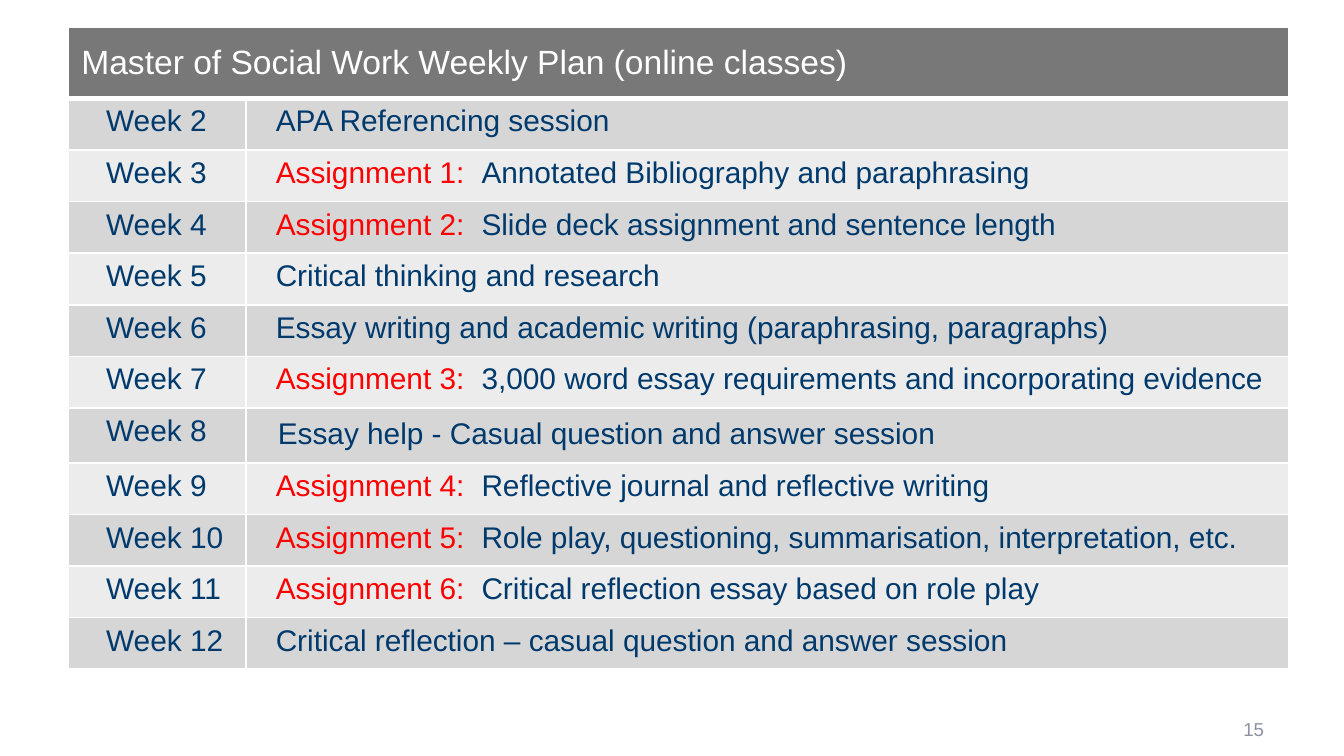
"""Build the weekly plan slide with its table of online classes."""
from typing import NamedTuple

from lxml import etree
from pptx import Presentation
from pptx.dml.color import RGBColor
from pptx.enum import text as t
from pptx.oxml import ns
from pptx.util import Pt

NAVY, RED, WHITE = "003A6D", "FF0000", "FFFFFF"
HEADER_GREY, PAGE_GREY = "777877", "8C91A3"
BANDS = ("D6D6D6", "ECECEC")
HEADER_HEIGHT, WEEK_HEIGHT = 38.2, 27.65
WEEK_INDENT, TOPIC_INDENT = 20.5, 16.1
TOPIC_TAB = 110.2
THIN, THICK = 1, 3


class Week(NamedTuple):
    number: int
    topic: str
    assignment: int = 0
    height: float = WEEK_HEIGHT
    indent: float = TOPIC_INDENT
    topic_top: float = 3.6


WEEKS = [
    Week(2, "APA Referencing session"),
    Week(3, "Annotated Bibliography and paraphrasing", 1),
    Week(4, "Slide deck assignment and sentence length", 2),
    Week(5, "Critical thinking and research"),
    Week(6, "Essay writing and academic writing (paraphrasing, paragraphs)"),
    Week(7, "3,000 word essay requirements and incorporating evidence", 3),
    Week(8, "Essay help - Casual question and answer session",
         height=29.5, indent=17.2, topic_top=5.4),
    Week(9, "Reflective journal and reflective writing", 4),
    Week(10, "Role play, questioning, summarisation, interpretation, etc.", 5),
    Week(11, "Critical reflection essay based on role play", 6),
    Week(12, "Critical reflection – casual question and answer session"),
]


def rgb(color: str) -> RGBColor:
    return RGBColor.from_string(color)


def add_run(paragraph, words: str, color: str, size: float) -> None:
    run = paragraph.add_run()
    run.text = words
    run.font.name = "Arial"
    run.font.size = Pt(size)
    run.font.bold = False
    run.font.color.rgb = rgb(color)


def add_tab(paragraph, position: float) -> None:
    properties = paragraph._p.get_or_add_pPr()
    stops = etree.SubElement(properties, ns.qn("a:tabLst"))
    etree.SubElement(stops, ns.qn("a:tab"), pos=str(Pt(position)), algn="l")


def style_cell(cell, fill: str, top: float = THIN, bottom: float = THIN) -> None:
    cell.fill.solid()
    cell.fill.fore_color.rgb = rgb(fill)
    properties = cell._tc.get_or_add_tcPr()
    widths = {"lnL": THIN, "lnR": THIN, "lnT": top, "lnB": bottom}
    for place, (side, width) in enumerate(widths.items()):
        line = etree.Element(ns.qn(f"a:{side}"), w=str(Pt(width)))
        solid = etree.SubElement(line, ns.qn("a:solidFill"))
        etree.SubElement(solid, ns.qn("a:srgbClr"), val=WHITE)
        properties.insert(place, line)


def fill_week(table, row: int, week: Week) -> None:
    table.rows[row].height = Pt(week.height)
    week_cell, topic_cell = table.cell(row, 0), table.cell(row, 1)
    for cell in (week_cell, topic_cell):
        style_cell(cell, BANDS[(row - 1) % 2], top=THICK if row == 1 else THIN)
    week_cell.margin_left = Pt(WEEK_INDENT)
    topic_cell.margin_left = Pt(week.indent)
    topic_cell.margin_top = Pt(week.topic_top)
    add_run(week_cell.text_frame.paragraphs[0], f"Week {week.number}", NAVY, 16)
    topic = topic_cell.text_frame.paragraphs[0]
    if week.assignment:
        add_tab(topic, TOPIC_TAB)
        add_run(topic, f"Assignment {week.assignment}:\t", RED, 16)
    add_run(topic, week.topic, NAVY, 16)


def add_plan(slide) -> None:
    height = HEADER_HEIGHT + sum(week.height for week in WEEKS)
    plan = slide.shapes.add_table(len(WEEKS) + 1, 2, Pt(36.4), Pt(14.5),
                                  Pt(654), Pt(height)).table
    plan.first_row = plan.horz_banding = False
    plan.columns[0].width, plan.columns[1].width = Pt(95.3), Pt(558.7)
    plan.rows[0].height = Pt(HEADER_HEIGHT)
    for column in range(2):
        style_cell(plan.cell(0, column), HEADER_GREY, bottom=THICK)
    header = plan.cell(0, 0)
    header.merge(plan.cell(0, 1))
    header.vertical_anchor = t.MSO_ANCHOR.MIDDLE
    add_run(header.text_frame.paragraphs[0],
            "Master of Social Work Weekly Plan (online classes)", WHITE, 18)
    for row, week in enumerate(WEEKS, start=1):
        fill_week(plan, row, week)


def add_page_number(slide, number: int) -> None:
    frame = slide.shapes.add_textbox(Pt(516.2), Pt(383.6), Pt(168), Pt(13.7)).text_frame
    frame.word_wrap = True
    frame.margin_top = frame.margin_bottom = 0
    frame.vertical_anchor = t.MSO_ANCHOR.MIDDLE
    paragraph = frame.paragraphs[0]
    paragraph.alignment = t.PP_ALIGN.RIGHT
    add_run(paragraph, str(number), PAGE_GREY, 10)


def main() -> None:
    deck = Presentation()
    deck.slide_width, deck.slide_height = Pt(720), Pt(405)
    slide = deck.slides.add_slide(deck.slide_layouts[6])
    add_plan(slide)
    add_page_number(slide, 15)
    deck.save("out.pptx")


if __name__ == "__main__":
    main()
